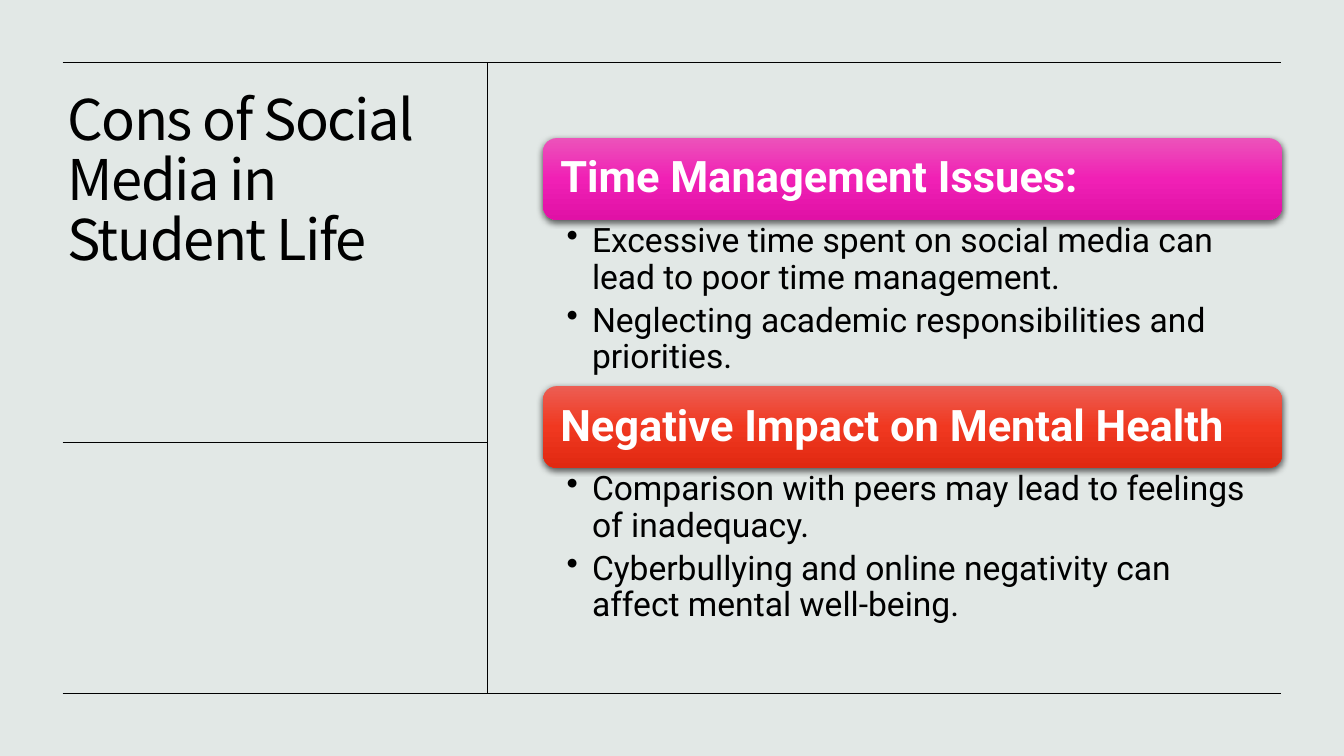
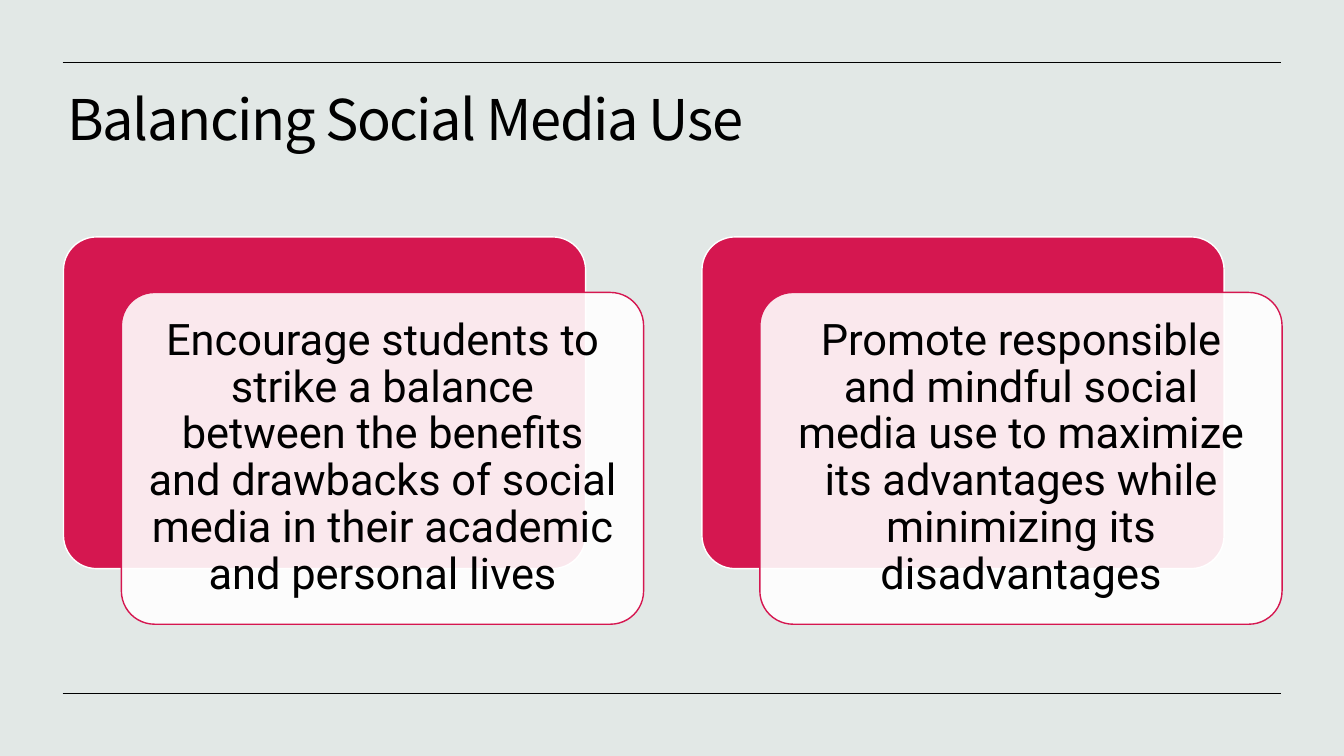
from lxml import etree
from pptx import Presentation
from pptx.dml.color import RGBColor
from pptx.enum.shapes import MSO_CONNECTOR, MSO_SHAPE
from pptx.enum.text import MSO_ANCHOR, PP_ALIGN
from pptx.oxml import parse_xml
from pptx.oxml.ns import qn
from pptx.util import Cm, Pt

STRAIGHT = MSO_CONNECTOR.STRAIGHT
ROUNDED = MSO_SHAPE.ROUNDED_RECTANGLE
LEFT, CENTER = PP_ALIGN.LEFT, PP_ALIGN.CENTER
TOP, MIDDLE = MSO_ANCHOR.TOP, MSO_ANCHOR.MIDDLE
DRAWING = "http://schemas.openxmlformats.org/drawingml/2006/main"

COLORS = {"ground": "E2E8E6", "ink": "000000", "white": "FFFFFF", "crimson": "D51750"}
TITLE = {"name": "Noto Sans CJK KR", "size": Pt(40), "color": "ink"}
HEADING = {"name": "Roboto", "size": Pt(31), "bold": True, "color": "white"}
BULLET = {"name": "Roboto", "size": Pt(24), "color": "ink"}
STATEMENT = {"name": "Roboto", "size": Pt(31), "color": "ink"}

CONS_TITLE = "Cons of Social Media in Student Life"
CONS = [
    ("Time Management Issues:", ("EC53BA", "F020B5", "E011A6"), [
        "Excessive time spent on social media can lead to poor time management.",
        "Neglecting academic responsibilities and priorities.",
    ]),
    ("Negative Impact on Mental Health", ("EC5E53", "F03820", "E02911"), [
        "Comparison with peers may lead to feelings of inadequacy.",
        "Cyberbullying and online negativity can affect mental well-being.",
    ]),
]
BALANCE_TITLE = "Balancing Social Media Use"
BALANCE = [
    "Encourage students to strike a balance between the benefits and drawbacks "
    "of social media in their academic and personal lives",
    "Promote responsible and mindful social media use to maximize its advantages "
    "while minimizing its disadvantages",
]

# Lengths in centimetres
RULE_LEFT, RULE_RIGHT = 1.58, 32.29
RULE_TOP, RULE_BOTTOM = 1.58, 17.47
DIVIDER_X, DIVIDER_Y = 12.29, 11.15
TITLE_LEFT, TITLE_TOP = 1.45, 2.18
BAR_LEFT, BAR_TOP, BAR_WIDTH, BAR_HEIGHT = 13.69, 3.48, 18.62, 2.06
BULLETS_HEIGHT = 4.19
CARD_LEFT, CARD_TOP, CARD_WIDTH, CARD_HEIGHT = 1.6, 5.97, 13.16, 8.36
CARD_STEP, CARD_SHIFT_X, CARD_SHIFT_Y = 16.09, 1.46, 1.4


def rgb(name):
    return RGBColor.from_string(COLORS[name])


def add_rule(page, x1, y1, x2, y2):
    rule = page.shapes.add_connector(STRAIGHT, Cm(x1), Cm(y1), Cm(x2), Cm(y2))
    rule.line.color.rgb = rgb("ink")
    rule.line.width = Pt(0.5)
    etree.SubElement(rule._element.spPr, qn("a:effectLst"))


def write(shape, texts, style, insets, anchor=TOP, align=LEFT, space_after=0):
    """Fill a shape with one paragraph per text; insets are left, top, right, bottom."""
    frame = shape.text_frame
    frame.word_wrap = True
    frame.vertical_anchor = anchor
    for side, inset in zip(("left", "top", "right", "bottom"), insets):
        setattr(frame, f"margin_{side}", Cm(inset))
    for index, text in enumerate(texts):
        para = frame.add_paragraph() if index else frame.paragraphs[0]
        para.alignment = align
        para.line_spacing = 0.9
        para.space_after = Pt(space_after)
        span = para.add_run()
        span.text = text
        for key, value in style.items():
            if key == "color":
                span.font.color.rgb = rgb(value)
            else:
                setattr(span.font, key, value)
    return frame.paragraphs


def add_text(page, left, top, width, height):
    return page.shapes.add_textbox(Cm(left), Cm(top), Cm(width), Cm(height))


def add_rounded(page, left, top, width, height):
    box = page.shapes.add_shape(ROUNDED, Cm(left), Cm(top), Cm(width), Cm(height))
    box.shadow.inherit = False
    return box


def add_page(deck, title, title_width, title_height):
    """Add a blank page with the shared title and outer rules."""
    page = deck.slides.add_slide(deck.slide_layouts[6])
    box = add_text(page, TITLE_LEFT, TITLE_TOP, title_width, title_height)
    para = write(box, [title], TITLE, (0.25, 0.13, 0.25, 0.13))[0]
    para.runs[0].font._element.set("spc", "-100")
    for y in (RULE_TOP, RULE_BOTTOM):
        add_rule(page, RULE_LEFT, y, RULE_RIGHT, y)
    return page


def add_bar(page, top, text, shades):
    bar = add_rounded(page, BAR_LEFT, top, BAR_WIDTH, BAR_HEIGHT)
    bar.line.fill.background()
    stops = "".join(
        f'<a:gs pos="{index * 50000}"><a:srgbClr val="{shade}"/></a:gs>'
        for index, shade in enumerate(shades))
    properties = bar._element.spPr
    properties.find(qn("a:prstGeom")).addnext(parse_xml(
        f'<a:gradFill xmlns:a="{DRAWING}" rotWithShape="1"><a:gsLst>{stops}</a:gsLst>'
        '<a:lin ang="5400000" scaled="0"/></a:gradFill>'))
    properties.find(qn("a:effectLst")).append(parse_xml(
        f'<a:outerShdw xmlns:a="{DRAWING}" blurRad="57150" dist="19050" dir="5400000" '
        'algn="ctr" rotWithShape="0"><a:srgbClr val="000000"><a:alpha val="63000"/>'
        '</a:srgbClr></a:outerShdw>'))
    write(bar, [text], HEADING, (0.33,) * 4, MIDDLE)


def add_bullets(page, top, texts):
    box = add_text(page, BAR_LEFT, top, BAR_WIDTH, BULLETS_HEIGHT)
    for para in write(box, texts, BULLET, (0.59, 0.1, 0.6, 0.1), space_after=4.8):
        properties = para._p.get_or_add_pPr()
        properties.set("marL", str(Cm(0.64)))
        properties.set("indent", str(-Cm(0.64)))
        etree.SubElement(properties, qn("a:buChar"), char="•")


def add_card(page, left, text):
    back = add_rounded(page, left, CARD_TOP, CARD_WIDTH, CARD_HEIGHT)
    front = add_rounded(page, left + CARD_SHIFT_X, CARD_TOP + CARD_SHIFT_Y,
                        CARD_WIDTH, CARD_HEIGHT)
    for box, fill, line in ((back, "crimson", "white"), (front, "white", "crimson")):
        box.adjustments[0] = 0.1
        box.fill.solid()
        box.fill.fore_color.rgb = rgb(fill)
        box.line.color.rgb = rgb(line)
        box.line.width = Pt(1)
    color = front._element.spPr.find(qn("a:solidFill")).find(qn("a:srgbClr"))
    etree.SubElement(color, qn("a:alpha"), val="90000")
    write(front, [text], STATEMENT, (0.33,) * 4, MIDDLE, CENTER)


def main():
    deck = Presentation()
    deck.slide_width, deck.slide_height = Cm(33.87), Cm(19.05)
    ground = deck.slide_master.background.fill
    ground.solid()
    ground.fore_color.rgb = rgb("ground")

    cons = add_page(deck, CONS_TITLE, 10.16, 7.42)
    add_rule(cons, DIVIDER_X, RULE_TOP, DIVIDER_X, RULE_BOTTOM)
    add_rule(cons, RULE_LEFT, DIVIDER_Y, DIVIDER_X, DIVIDER_Y)
    for index, (heading, shades, points) in enumerate(CONS):
        top = BAR_TOP + index * (BAR_HEIGHT + BULLETS_HEIGHT)
        add_bar(cons, top, heading, shades)
        add_bullets(cons, top + BAR_HEIGHT, points)

    balance = add_page(deck, BALANCE_TITLE, 30.86, 2.92)
    for index, statement in enumerate(BALANCE):
        add_card(balance, CARD_LEFT + index * CARD_STEP, statement)

    deck.save("out.pptx")


if __name__ == "__main__":
    main()
